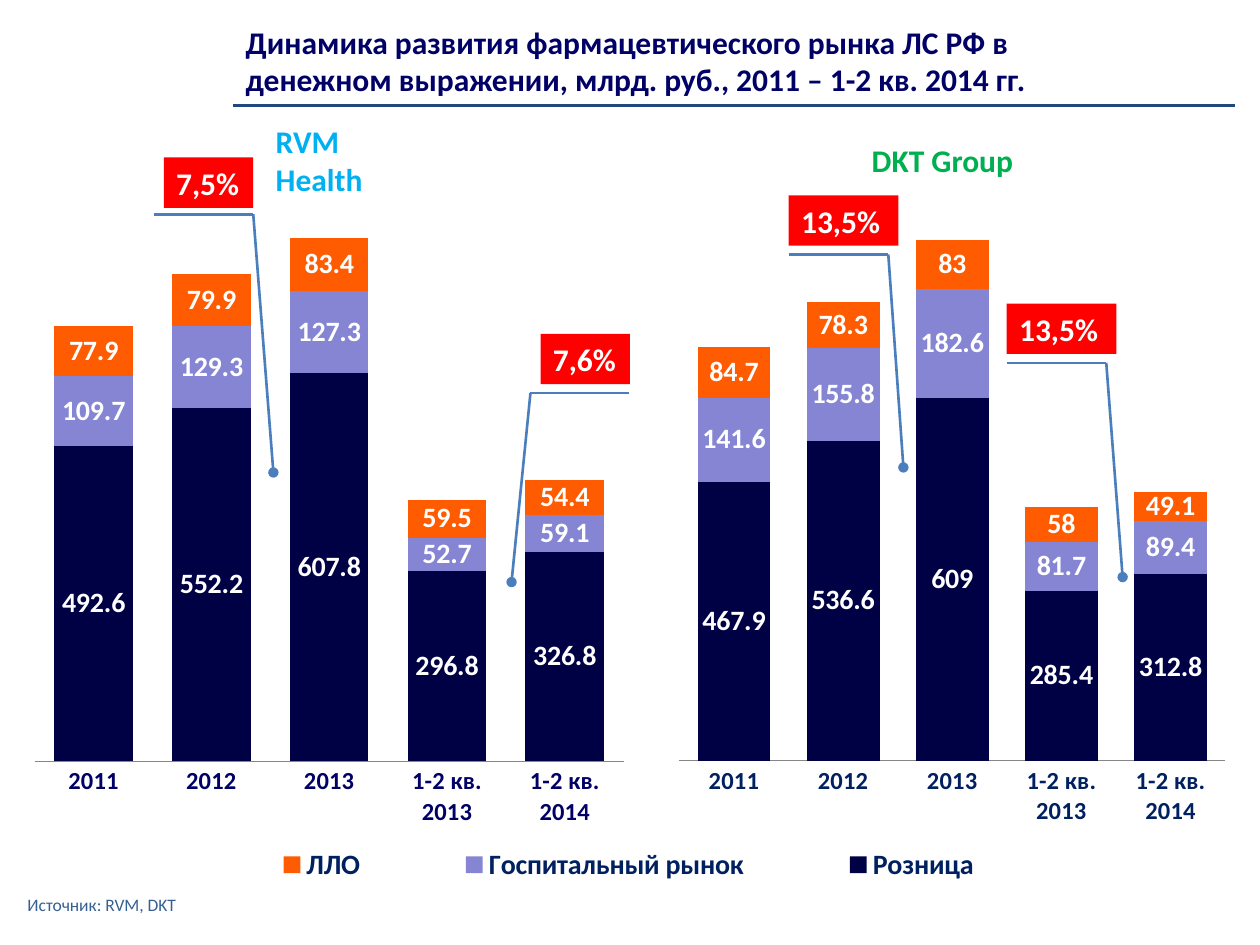
import lxml.etree
import pptx
import pptx.chart.data
import pptx.dml.color
import pptx.enum.chart
import pptx.enum.shapes
import pptx.enum.text
import pptx.oxml
import pptx.oxml.ns
import pptx.util

COLORS = {
    "title": "000066", "rule": "1F497D", "navy": "002060", "source": "376092",
    "left": "00B0F0", "right": "00B050", "pointer": "4B7EBC", "callout": "FF0000",
    "white": "FFFFFF", "axis": "868686",
    "retail": "000044", "hospital": "8585D4", "subsidy": "FF5B00",
}
CATEGORIES = ["2011", "2012", "2013", "1-2 кв. 2013", "1-2 кв. 2014"]

presentation = pptx.Presentation()
presentation.slide_width = pptx.util.Inches(10)
presentation.slide_height = pptx.util.Inches(7.5)
slide = presentation.slides.add_slide(presentation.slide_layouts[5])

# Grid of 100 columns by 75 rows
column = presentation.slide_width // 100
row = presentation.slide_height // 75


def format_text(shape, text, size, color, bold=True):
    frame = shape.text_frame
    frame.text = text
    paragraph = frame.paragraphs[0]
    paragraph.alignment = pptx.enum.text.PP_ALIGN.LEFT
    font = paragraph.runs[0].font
    font.name, font.size, font.bold = "Calibri", pptx.util.Pt(size), bold
    font.color.rgb = pptx.dml.color.RGBColor.from_string(COLORS[color])


def add_line(start, end, color, dot=False):
    line = slide.shapes.add_connector(
        pptx.enum.shapes.MSO_CONNECTOR.STRAIGHT,
        int(start[0] * column), int(start[1] * row), int(end[0] * column), int(end[1] * row))
    line.line.width = pptx.util.Pt(1.5)
    line.line.color.rgb = pptx.dml.color.RGBColor.from_string(COLORS[color])
    properties = line._element.spPr
    if dot:
        tail = lxml.etree.SubElement(properties.find(pptx.oxml.ns.qn("a:ln")),
                                     pptx.oxml.ns.qn("a:tailEnd"))
        tail.set("type", "oval")
    lxml.etree.SubElement(properties, pptx.oxml.ns.qn("a:effectLst"))


# Title and the rule under it
title = slide.shapes.title
title.left, title.top = int(18.5 * column), int(1.3 * row)
title.width, title.height = int(71.7 * column), int(7.1 * row)
format_text(title, "Динамика развития фармацевтического рынка ЛС РФ в денежном выражении, "
            "млрд. руб., 2011 – 1-2 кв. 2014 гг.", 18, "title")
title.text_frame.vertical_anchor = pptx.enum.text.MSO_ANCHOR.TOP
title.text_frame.auto_size = pptx.enum.text.MSO_AUTO_SIZE.NONE
add_line((18.5, 8.4), (98, 8.4), "rule")

# Stacked column charts: box, plot area, axis maximum, label colour, legend area, values
charts = [
    ((52.4, 11.5, 47.6, 55.1), (0.032, 0.029, 0.91, 0.858), 1000, "navy", None,
     [(467.9, 536.6, 609, 285.4, 312.8), (141.6, 155.8, 182.6, 81.7, 89.4),
      (84.7, 78.3, 83, 58, 49.1)]),
    ((0, 14.7, 98.8, 55.9), (0.028, 0.001, 0.473, 0.817), 900, "title",
     (0.15, 0.93, 0.71, 0.07),
     [(492.6, 552.2, 607.8, 296.8, 326.8), (109.7, 129.3, 127.3, 52.7, 59.1),
      (77.9, 79.9, 83.4, 59.5, 54.4)]),
]
for box, plot_area, maximum, label_color, legend_area, values in charts:
    data = pptx.chart.data.CategoryChartData()
    data.categories = CATEGORIES
    for name, numbers in zip(("Розница", "Госпитальный рынок", "ЛЛО"), values):
        data.add_series(name, numbers)
    left, top, width, height = box
    chart = slide.shapes.add_chart(
        pptx.enum.chart.XL_CHART_TYPE.COLUMN_STACKED, int(left * column), int(top * row),
        int(width * column), int(height * row), data).chart
    chart.font.name, chart.font.size = "Calibri", pptx.util.Pt(18)
    chart.has_title = False
    plot = chart.plots[0]
    plot.gap_width, plot.overlap, plot.vary_by_categories = 50, 100, False

    # Series colours and value labels
    for series, color in zip(plot.series, ("retail", "hospital", "subsidy")):
        series.format.fill.solid()
        series.format.fill.fore_color.rgb = pptx.dml.color.RGBColor.from_string(COLORS[color])
        labels = series.data_labels
        labels.show_value = True
        labels.font.size, labels.font.bold = pptx.util.Pt(16), True
        labels.font.color.rgb = pptx.dml.color.RGBColor.from_string(COLORS["white"])

    # Axes
    chart.value_axis.visible = False
    chart.value_axis.has_major_gridlines = False
    chart.value_axis.minimum_scale, chart.value_axis.maximum_scale = 0, maximum
    axis = chart.category_axis
    axis.major_tick_mark = pptx.enum.chart.XL_TICK_MARK.NONE
    axis.format.line.color.rgb = pptx.dml.color.RGBColor.from_string(COLORS["axis"])
    axis.tick_labels.font.size, axis.tick_labels.font.bold = pptx.util.Pt(14), True
    axis.tick_labels.font.color.rgb = pptx.dml.color.RGBColor.from_string(COLORS[label_color])

    # Legend and fixed layouts
    chart.has_legend = legend_area is not None
    areas = [(chart._chartSpace.chart.plotArea, plot_area, '<c:layoutTarget val="inner"/>')]
    if chart.has_legend:
        legend = chart.legend
        legend.position = pptx.enum.chart.XL_LEGEND_POSITION.RIGHT
        legend.include_in_layout = True
        legend.font.size, legend.font.bold = pptx.util.Pt(16), True
        legend.font.color.rgb = pptx.dml.color.RGBColor.from_string(COLORS["navy"])
        areas.append((legend._element, legend_area, ""))
    for element, area, target in areas:
        for old_layout in element.findall(pptx.oxml.ns.qn("c:layout")):
            element.remove(old_layout)
        modes = "".join(f'<c:{side}Mode val="edge"/>' for side in "xy")
        sizes = "".join(f'<c:{side} val="{share}"/>' for side, share in zip("xywh", area))
        layout = pptx.oxml.parse_xml(
            f'<c:layout {pptx.oxml.ns.nsdecls("c")}><c:manualLayout>{target}{modes}{sizes}'
            '</c:manualLayout></c:layout>')
        element.insert(1 if not target else 0, layout)

# Chart headings and source note
notes = [
    ((20.9, 10.7, 13.6, 4), "RVM Health", 18, "left", True),
    ((68.2, 10.7, 14.1, 4), "DKT Group", 18, "right", True),
    ((1.2, 69.8, 31.7, 4), "Источник: RVM, DKT", 10, "source", False),
]
for (left, top, width, height), text, size, color, bold in notes:
    note = slide.shapes.add_textbox(int(left * column), int(top * row),
                                    int(width * column), int(height * row))
    format_text(note, text, size, color, bold)
    note.text_frame.word_wrap = True
    note.text_frame.vertical_anchor = pptx.enum.text.MSO_ANCHOR.MIDDLE

# Growth callouts: text, box left, top and width, shelf start, bend and pointer end
callouts = [
    ("7,5%", (13, 12.5, 7.1), (12.2, 17), (20.1, 17), (21.7, 37.5)),
    ("7,6%", (42.9, 26.5, 7.1), (49.9, 31.2), (42.1, 31.2), (40.6, 46.2)),
    ("13,5%", (62.6, 15.5, 8.7), (62.6, 20.2), (70.5, 20.2), (71.7, 37.1)),
    ("13,5%", (79.9, 24.1, 8.7), (79.9, 28.8), (87.8, 28.8), (89.1, 45.8)),
]
for text, (left, top, width), shelf, bend, end in callouts:
    add_line(shelf, bend, "pointer")
    add_line(bend, end, "pointer", dot=True)
    callout = slide.shapes.add_shape(
        pptx.enum.shapes.MSO_SHAPE.RECTANGLE, int(left * column), int(top * row),
        int(width * column), 4 * row)
    callout.shadow.inherit = False
    callout.fill.solid()
    callout.fill.fore_color.rgb = pptx.dml.color.RGBColor.from_string(COLORS["callout"])
    callout.line.fill.background()
    format_text(callout, text, 18, "white")

presentation.save("out.pptx")
